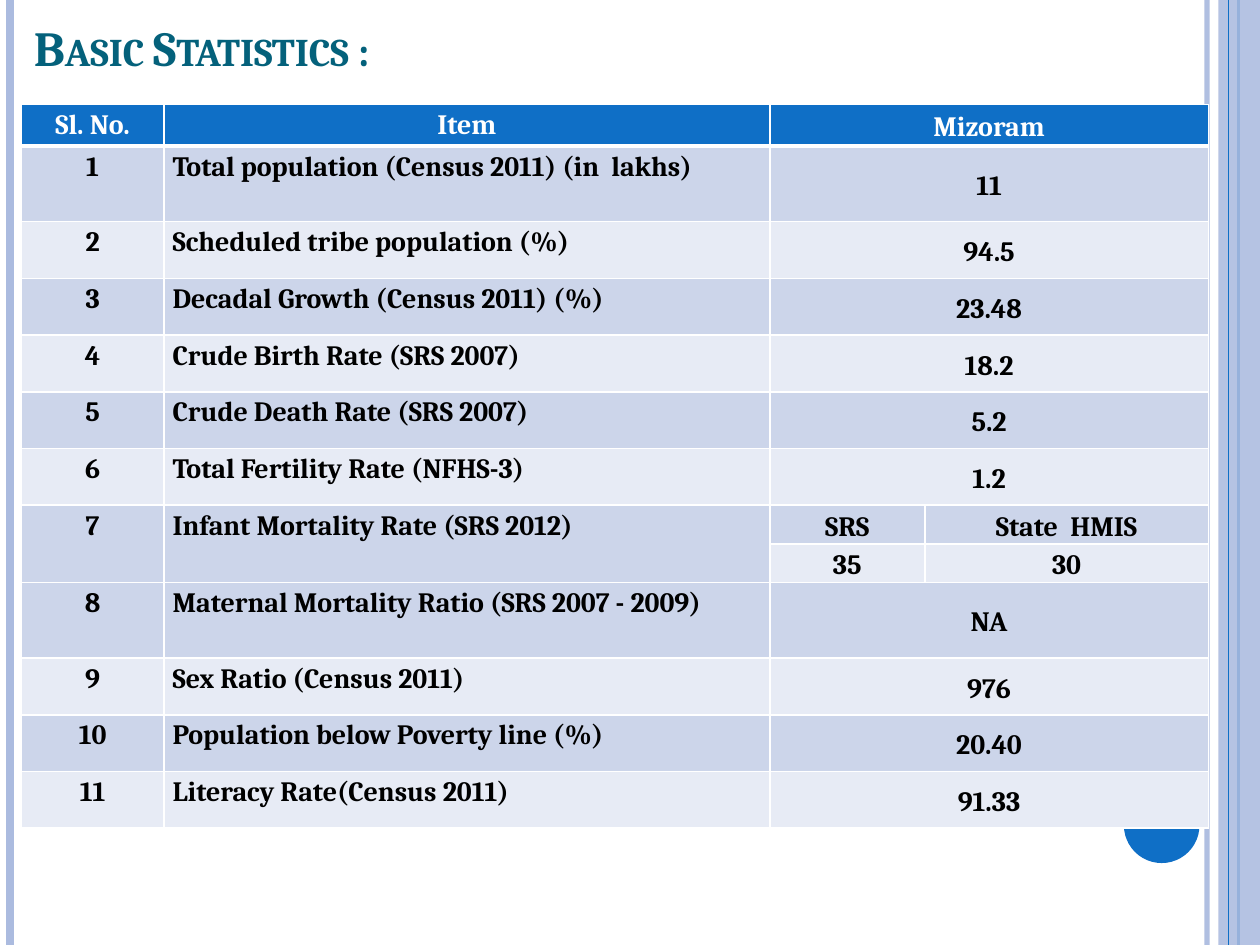
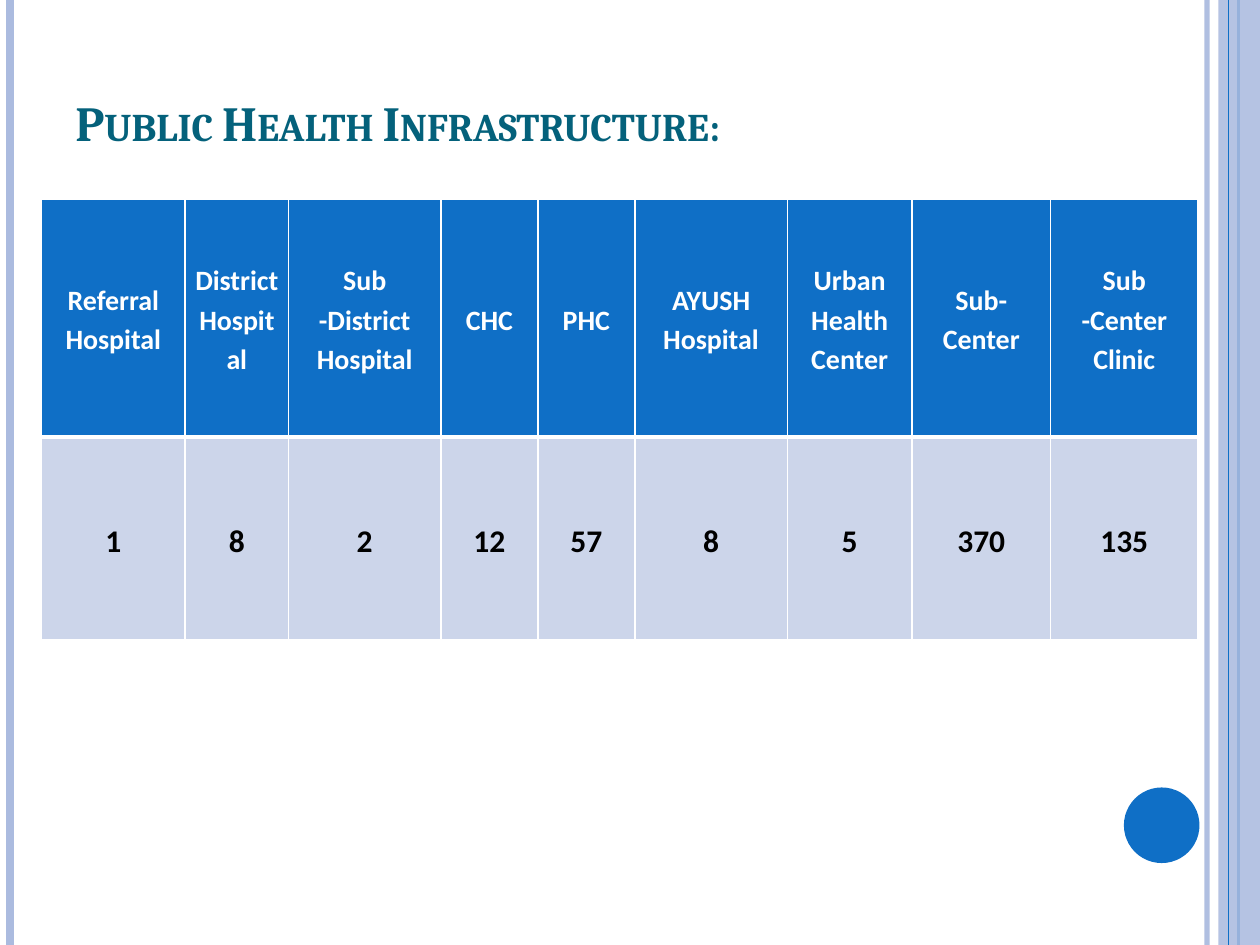
from dataclasses import dataclass

from lxml.etree import SubElement
from pptx import Presentation
from pptx.dml.color import RGBColor
from pptx.enum.shapes import MSO_CONNECTOR, MSO_SHAPE
from pptx.enum.text import MSO_ANCHOR, PP_ALIGN
from pptx.oxml.ns import qn
from pptx.util import Inches, Pt

# Content
BASIC_TITLE = [("Basic Statistics ", 28), (":", 30)]
BASIC_HEADER = ("Sl. No.", "Item", "Mizoram")
# item, row height, value (or a label row and a value row)
BASIC_ITEMS = [
    ("Total population (Census 2011) (in  lakhs)", 0.6, "11"),
    ("Scheduled tribe population (%)", 0.45, "94.5"),
    ("Decadal Growth (Census 2011) (%)", 0.45, "23.48"),
    ("Crude Birth Rate (SRS 2007)", 0.45, "18.2"),
    ("Crude Death Rate (SRS 2007)", 0.45, "5.2"),
    ("Total Fertility Rate (NFHS-3)", 0.45, "1.2"),
    ("Infant Mortality Rate (SRS 2012)", 0.22, [("SRS", "State  HMIS"), ("35", "30")]),
    ("Maternal Mortality Ratio (SRS 2007 - 2009)", 0.6, "NA"),
    ("Sex Ratio (Census 2011)", 0.45, "976"),
    ("Population below Poverty line (%)", 0.45, "20.40"),
    ("Literacy Rate(Census 2011)", 0.45, "91.33"),
]
BASIC_WIDTHS = (1.13, 4.81, 1.23, 2.25)

HEALTH_TITLE = [("Public Health Infrastructure:", 28)]
# facility, count, column width
HEALTH_FACILITIES = [
    ("Referral\nHospital", "1", 1.14),
    ("District Hospital", "8", 0.82),
    ("Sub -District Hospital", "2", 1.21),
    ("CHC", "12", 0.77),
    ("PHC", "57", 0.77),
    ("AYUSH Hospital", "8", 1.21),
    ("Urban Health Center", "5", 0.99),
    ("Sub- Center", "370", 1.1),
    ("Sub -Center Clinic", "135", 1.17),
]
HEALTH_HEIGHTS = (1.89, 1.61)


@dataclass(frozen=True)
class Theme:
    title: str = "04617B"
    accent: str = "0F6FC6"
    stripe: str = "ABBBDF"
    bands: tuple = ("CCD5EA", "E7EBF5")
    white: str = "FFFFFF"
    black: str = "000000"
    serif: str = "Cambria"
    sans: str = "Calibri"
    cell_size: int = 16
    count_size: int = 18
    thin: int = 1
    thick: int = 3


THEME = Theme()
PAGE_WIDTH, PAGE_HEIGHT = 10, 7.5


def rgb(colour):
    return RGBColor.from_string(colour)


def set_opacity(part_fill_owner, percent):
    colour = next(part_fill_owner.iter(qn("a:srgbClr")))
    SubElement(colour, qn("a:alpha"), val=str(percent * 1000))


def write(frame, text, size=16, font=THEME.serif, colour=THEME.black, align=PP_ALIGN.LEFT,
          spacing=None, after=None, small_caps=False):
    """Write text, given as a string or as (text, size) spans, into a text frame."""
    lines = [[(line, size)] for line in text.split("\n")] if isinstance(text, str) else [text]
    for index, spans in enumerate(lines):
        para = frame.add_paragraph() if index else frame.paragraphs[0]
        para.alignment = align
        if spacing:
            para.line_spacing = spacing
        if after is not None:
            para.space_after = Pt(after)
        for words, points in spans:
            span = para.add_run()
            span.text = words
            span.font.size, span.font.name, span.font.bold = Pt(points), font, True
            span.font.color.rgb = rgb(colour)
            if small_caps:
                span._r.get_or_add_rPr().set("cap", "small")


# Shared page furniture
def add_rule(page, x, colour, width, opacity=None):
    rule = page.shapes.add_connector(
        MSO_CONNECTOR.STRAIGHT, Inches(x), 0, Inches(x), Inches(PAGE_HEIGHT))
    rule.line.color.rgb, rule.line.width = rgb(colour), Pt(width)
    if opacity:
        set_opacity(rule.line._ln, opacity)
    SubElement(rule._element.spPr, qn("a:effectLst"))


def add_solid(page, kind, place, colour):
    shape = page.shapes.add_shape(kind, *map(Inches, place))
    shape.shadow.inherit = False
    shape.fill.solid()
    shape.fill.fore_color.rgb = rgb(colour)
    shape.line.fill.background()
    return shape


def add_page(deck, title, place):
    page = deck.slides.add_slide(deck.slide_layouts[6])
    add_rule(page, 9.58, THEME.stripe, 3, opacity=93)
    add_rule(page, 0.08, THEME.stripe, 4.5)
    add_rule(page, 9.83, THEME.accent, 1.5)
    band = add_solid(page, MSO_SHAPE.RECTANGLE, (9.67, 0, 0.33, PAGE_HEIGHT), THEME.stripe)
    set_opacity(band._element.spPr, 87)
    add_rule(page, 9.75, THEME.accent, 0.75)
    add_solid(page, MSO_SHAPE.OVAL, (8.92, 6.25, 0.6, 0.6), THEME.accent)

    box = page.shapes.add_textbox(*map(Inches, place))
    box.text_frame.word_wrap = True
    box.text_frame.vertical_anchor = MSO_ANCHOR.BOTTOM
    write(box.text_frame, title, colour=THEME.title, small_caps=True)
    return page


# Tables
def add_grid(page, left, top, widths, heights):
    table = page.shapes.add_table(
        len(heights), len(widths), Inches(left), Inches(top),
        Inches(sum(widths)), Inches(sum(heights))).table
    table.first_row = table.horz_banding = False
    for column, width in zip(table.columns, widths):
        column.width = Inches(width)
    for row, height in zip(table.rows, heights):
        row.height = Inches(height)
    return table


def set_borders(cell, row):
    """White borders, thick between the header and the first body row."""
    widths = {"L": THEME.thin, "R": THEME.thin,
              "T": THEME.thick if row == 1 else THEME.thin,
              "B": THEME.thick if row == 0 else THEME.thin}
    properties = cell._tc.get_or_add_tcPr()
    for index, (side, width) in enumerate(widths.items()):
        line = SubElement(properties, qn(f"a:ln{side}"), w=str(Pt(width)))
        SubElement(SubElement(line, qn("a:solidFill")), qn("a:srgbClr"), val=THEME.white)
        properties.insert(index, line)


def fill_cell(table, row, column, text, fill, anchor=MSO_ANCHOR.MIDDLE, **text_format):
    cell = table.cell(row, column)
    cell.margin_left = cell.margin_right = Inches(0.07)
    cell.margin_top = cell.margin_bottom = 0
    cell.vertical_anchor = anchor
    cell.fill.solid()
    cell.fill.fore_color.rgb = rgb(fill)
    set_borders(cell, row)
    if text:
        write(cell.text_frame, text, spacing=1.15, **text_format)


def build_basic_statistics(deck):
    page = add_page(deck, BASIC_TITLE, (0.17, 0.08, 9.83, 0.58))
    # Each row: number, item, value, second value (empty where merged)
    rows, heights, merges = [(*BASIC_HEADER, "")], [0.33], [(0, 2, 0, 3)]
    for number, (item, height, value) in enumerate(BASIC_ITEMS, 1):
        first = len(rows)
        if isinstance(value, str):
            rows.append((str(number), item, value, ""))
            merges.append((first, 2, first, 3))
        else:
            rows += [(str(number), item, *value[0]), ("", "", *value[1])]
            merges += [(first, column, first + 1, column) for column in (0, 1)]
        heights += [height] * (len(rows) - first)

    table = add_grid(page, 0.17, 0.83, BASIC_WIDTHS, heights)
    for row, texts in enumerate(rows):
        header = row == 0
        for column, text in enumerate(texts):
            fill_cell(
                table, row, column, text,
                THEME.accent if header else THEME.bands[(row - 1) % 2],
                anchor=MSO_ANCHOR.TOP if column < 2 else MSO_ANCHOR.MIDDLE,
                align=PP_ALIGN.LEFT if column == 1 and not header else PP_ALIGN.CENTER,
                colour=THEME.white if header else THEME.black,
                size=THEME.cell_size, after=10)
    for top, left, bottom, right in merges:
        table.cell(top, left).merge(table.cell(bottom, right))


def build_health_infrastructure(deck):
    page = add_page(deck, HEALTH_TITLE, (0.5, 0.3, 9, 0.95))
    widths = [width for _, _, width in HEALTH_FACILITIES]
    table = add_grid(page, 0.33, 1.58, widths, HEALTH_HEIGHTS)
    shared = {"font": THEME.sans, "align": PP_ALIGN.CENTER}
    for column, (facility, count, _) in enumerate(HEALTH_FACILITIES):
        fill_cell(table, 0, column, facility, THEME.accent,
                  size=THEME.cell_size, colour=THEME.white, **shared)
        fill_cell(table, 1, column, count, THEME.bands[0], size=THEME.count_size, **shared)


def main():
    deck = Presentation()
    deck.slide_width, deck.slide_height = Inches(PAGE_WIDTH), Inches(PAGE_HEIGHT)
    build_basic_statistics(deck)
    build_health_infrastructure(deck)
    deck.save("out.pptx")


if __name__ == "__main__":
    main()
